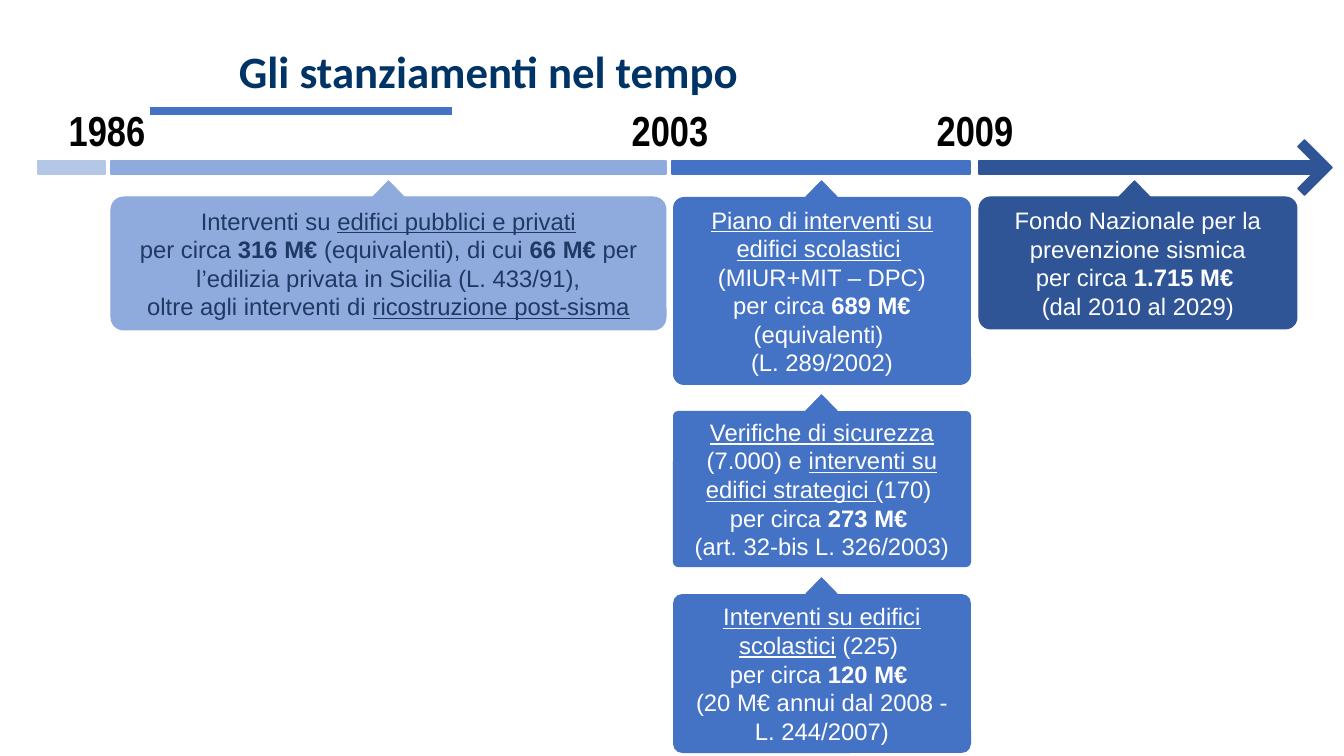
from dataclasses import dataclass
from typing import NamedTuple

from lxml import etree
from pptx import Presentation, util as u
from pptx.dml.color import RGBColor
from pptx.enum import shapes, text
from pptx.oxml.ns import qn


@dataclass(frozen=True)
class Theme:
    first: str = "8FAADC"
    second: str = "4472C4"
    third: str = "2F5597"
    before: str = "B4C7E7"
    navy: str = "203864"
    title: str = "003366"
    white: str = "FFFFFF"
    black: str = "000000"
    title_size: int = 32
    year_size: int = 30
    body_size: int = 17


class Run(NamedTuple):
    text: str
    bold: bool = False
    underline: bool = False


class Box(NamedTuple):
    left: int
    top: int
    width: int
    height: int


@dataclass(frozen=True)
class Segment:
    left: int
    width: int
    color: str


@dataclass(frozen=True)
class Card:
    box: Box
    fill: str
    ink: str
    corner: float
    paragraphs: list[list[Run]]
    outlined: bool = False
    pointer_shift: int = 0


THEME = Theme()
EMU_PER_PX = 914400 / 100.8
BAR_TOP, BAR_HEIGHT = 161, 13
POINTER_WIDTH, POINTER_HEIGHT = 31, 16
CARDS_TOP = 197

SEGMENTS = [
    Segment(38, 67, THEME.before),
    Segment(111, 555, THEME.first),
    Segment(672, 298, THEME.second),
    Segment(979, 344, THEME.third),
]
YEARS = {"1986": 40, "2003": 603, "2009": 908}


def bold(words: str) -> Run:
    return Run(words, bold=True)


def under(words: str) -> Run:
    return Run(words, underline=True)


CARDS = [
    Card(Box(111, CARDS_TOP, 555, 133), THEME.first, THEME.navy, 0.095, [
        [Run("Interventi su "), under("edifici pubblici e privati")],
        [Run("per circa "), bold("316 M€ "), Run("(equivalenti), di cui "),
         bold("66 M€"), Run(" per l’edilizia privata in Sicilia (L. 433/91),")],
        [Run("oltre agli interventi di "), under("ricostruzione post-sisma")],
    ], outlined=True),
    Card(Box(673, CARDS_TOP, 298, 188), THEME.second, THEME.white, 0.059, [
        [under("Piano di interventi su edifici scolastici"), Run(" ")],
        [Run("(MIUR+MIT – DPC)")],
        [Run("per circa "), bold("689 M€ "), Run("(equivalenti) ")],
        [Run("(L. 289/2002)")],
    ]),
    Card(Box(673, 411, 298, 156), THEME.second, THEME.white, 0.032, [
        [under("Verifiche di sicurezza "), Run("(7.000) e "),
         under("interventi su edifici strategici "), Run("(170) ")],
        [Run("per circa "), bold("273 M€ ")],
        [Run("(art. 32-bis L. 326/2003)")],
    ]),
    Card(Box(673, 594, 298, 159), THEME.second, THEME.white, 0.059, [
        [under("Interventi su edifici scolastici"), Run(" (225) ")],
        [Run("per circa "), bold("120 M€ ")],
        [Run("(20 M€ annui dal 2008 - L. 244/2007)")],
    ]),
    Card(Box(979, CARDS_TOP, 318, 132), THEME.third, THEME.white, 0.088, [
        [Run("Fondo Nazionale per la prevenzione sismica")],
        [Run("per circa "), bold("1.715 M€ ")],
        [Run("(dal 2010 al 2029)")],
    ], outlined=True, pointer_shift=-3),
]


def px(length: float) -> u.Emu:
    return u.Emu(round(length * EMU_PER_PX))


def place(box: Box) -> list[u.Emu]:
    return [px(length) for length in box]


def add_solid(slide, preset, box: Box, color: str, line_width: float = 1):
    solid = slide.shapes.add_shape(preset, *place(box))
    solid.shadow.inherit = False
    solid.fill.solid()
    solid.fill.fore_color.rgb = RGBColor.from_string(color)
    if line_width:
        solid.line.color.rgb = RGBColor.from_string(color)
        solid.line.width = u.Pt(line_width)
    else:
        solid.line.fill.background()
    return solid


def style(paragraph, family: str, size: int, color: str) -> None:
    paragraph.font.name = family
    paragraph.font.size = u.Pt(size)
    paragraph.font.color.rgb = RGBColor.from_string(color)


def add_heading(slide, words: str, box: Box, family: str, size: int, color: str):
    frame = slide.shapes.add_textbox(*place(box)).text_frame
    frame.word_wrap = True
    heading = frame.paragraphs[0]
    heading.text = words
    style(heading, family, size, color)
    heading.font.bold = True
    return frame


def add_card(slide, card: Card) -> None:
    body = add_solid(slide, shapes.MSO_SHAPE.ROUNDED_RECTANGLE, card.box,
                     card.fill, 0.75 if card.outlined else 0)
    body.adjustments[0] = card.corner
    frame = body.text_frame
    frame.word_wrap = True
    frame.auto_size = text.MSO_AUTO_SIZE.SHAPE_TO_FIT_TEXT
    frame.vertical_anchor = text.MSO_ANCHOR.MIDDLE
    for index, runs in enumerate(card.paragraphs):
        paragraph = frame.add_paragraph() if index else frame.paragraphs[0]
        paragraph.alignment = text.PP_ALIGN.CENTER
        style(paragraph, "Arial", THEME.body_size, card.ink)
        for part in runs:
            run = paragraph.add_run()
            run.text = part.text
            run.font.bold = part.bold or None
            run.font.underline = part.underline or None

    left = card.box.left + (card.box.width - POINTER_WIDTH) // 2 + card.pointer_shift
    pointer = Box(left, card.box.top - POINTER_HEIGHT, POINTER_WIDTH, POINTER_HEIGHT)
    add_solid(slide, shapes.MSO_SHAPE.ISOSCELES_TRIANGLE, pointer, card.fill)


def add_arrowhead(slide) -> None:
    corner = shapes.MSO_SHAPE.from_xml("corner")
    head = add_solid(slide, corner, Box(1285, 148, 39, 39), THEME.third)
    head.adjustments[0] = 0.24
    head.adjustments[1] = 0.24
    head.rotation = 315
    head._element.spPr.find(qn("a:xfrm")).set("flipH", "1")


def add_title(slide) -> None:
    frame = add_heading(slide, "Gli stanziamenti nel tempo", Box(232, 44, 781, 60),
                        "Calibri", THEME.title_size, THEME.title)
    frame.margin_left, frame.margin_right = px(7), px(30)
    frame.margin_top = frame.margin_bottom = px(4)
    frame.vertical_anchor = text.MSO_ANCHOR.MIDDLE
    frame.paragraphs[0].line_spacing = 0.9

    rule = slide.shapes.add_connector(shapes.MSO_CONNECTOR.STRAIGHT,
                                      px(150), px(111), px(452), px(111))
    rule.line.color.rgb = RGBColor.from_string(THEME.second)
    rule.line.width = u.Pt(6)
    etree.SubElement(rule._element.spPr, qn("a:effectLst"))


def main() -> None:
    deck = Presentation()
    deck.slide_width, deck.slide_height = px(1344), px(756)
    slide = deck.slides.add_slide(deck.slide_layouts[6])

    # Timeline
    for segment in SEGMENTS:
        bar = Box(segment.left, BAR_TOP, segment.width, BAR_HEIGHT)
        add_solid(slide, shapes.MSO_SHAPE.RECTANGLE, bar, segment.color)
    for year, left in YEARS.items():
        frame = add_heading(slide, year, Box(left, 100, 134, 61),
                            "Arial Narrow", THEME.year_size, THEME.black)
        frame.paragraphs[0].alignment = text.PP_ALIGN.CENTER
    add_arrowhead(slide)

    # Funding cards
    for card in CARDS:
        add_card(slide, card)

    # Title and its rule
    add_title(slide)
    deck.save("out.pptx")


if __name__ == "__main__":
    main()
